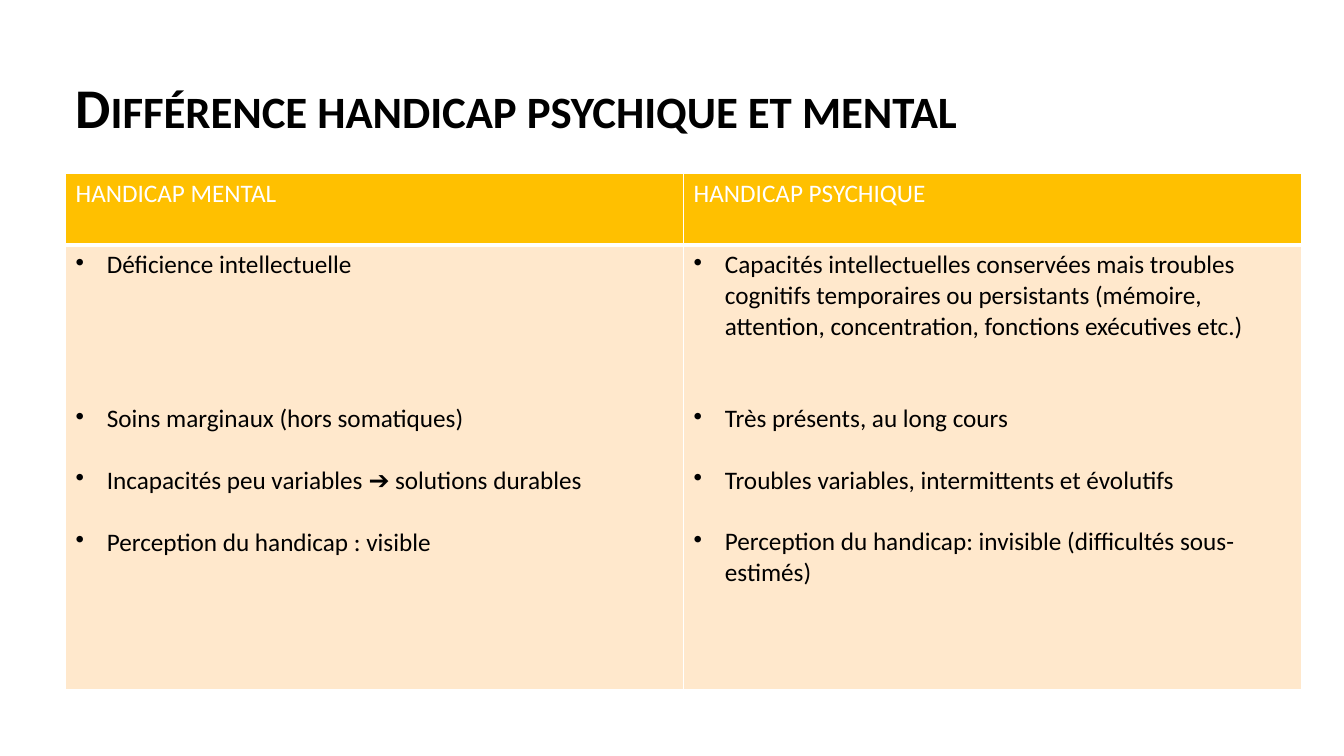
from lxml import etree
from pptx import Presentation
from pptx.dml.color import RGBColor
from pptx.enum import text
from pptx.oxml import ns
from pptx.util import Inches, Pt

BLACK = RGBColor(0, 0, 0)
WHITE = RGBColor(255, 255, 255)
GOLD = RGBColor(0xFF, 0xC0, 0)
CREAM = RGBColor(0xFF, 0xE8, 0xCC)

TITLE = {"name": "Calibri", "size": Pt(40), "bold": True}
CELL = {"name": "Calibri", "size": Pt(18), "bold": False}
LINE = 22

HEADS = ["HANDICAP MENTAL", "HANDICAP PSYCHIQUE"]
MENTAL = [
    ("Déficience intellectuelle", 0),
    ("Soins marginaux (hors somatiques)", 4),
    ("Incapacités peu variables ➔ solutions durables", 1),
    ("Perception du handicap : visible", 1),
]
PSYCHIC = [
    ("Capacités intellectuelles conservées mais troubles cognitifs temporaires "
     "ou persistants (mémoire, attention, concentration, fonctions exécutives etc.)", 0),
    ("Très présents, au long cours", 2),
    ("Troubles variables, intermittents et évolutifs", 1),
    ("Perception du handicap: invisible (difficultés sous-estimés)", 1),
]


def style(font, look, color):
    for key, value in look.items():
        setattr(font, key, value)
    font.color.rgb = color


def add_title(slide, words):
    box = slide.shapes.add_textbox(Inches(0.65), Inches(0.48), Inches(9.87), Inches(1.23))
    frame = box.text_frame
    frame.word_wrap = True
    frame.vertical_anchor = text.MSO_ANCHOR.MIDDLE
    para = frame.paragraphs[0]
    para.line_spacing = 0.9
    run = para.add_run()
    run.text = words
    style(run.font, TITLE, BLACK)
    run.font._element.set("cap", "small")


def add_edge(cell, side, width):
    props = cell._tc.get_or_add_tcPr()
    line = etree.SubElement(props, ns.qn(f"a:ln{side}"), w=str(Pt(width)))
    fill = etree.SubElement(line, ns.qn("a:solidFill"))
    etree.SubElement(fill, ns.qn("a:srgbClr"), val=str(WHITE))


def fill_cell(cell, items, back, color, base, dots):
    for side in "LRT":
        add_edge(cell, side, 1)
    add_edge(cell, "B", base)
    cell.fill.solid()
    cell.fill.fore_color.rgb = back
    frame = cell.text_frame
    for spot, (words, gap) in enumerate(items):
        para = frame.add_paragraph() if spot else frame.paragraphs[0]
        if dots:
            props = para._p.get_or_add_pPr()
            props.set("marL", str(Inches(0.31)))
            props.set("indent", str(Inches(-0.31)))
            etree.SubElement(props, ns.qn("a:buChar"), char="•")
        if gap:
            para.space_before = Pt(gap * LINE)
        run = para.add_run()
        run.text = words
        style(run.font, CELL, color)


def add_grid(slide):
    grid = slide.shapes.add_table(
        2, 2, Inches(0.65), Inches(1.72), Inches(12.26), Inches(5.12)).table
    grid.first_row = False
    grid.horz_banding = False
    for row, high in zip(grid.rows, (0.71, 4.41)):
        row.height = Inches(high)
    for col, (head, items) in enumerate(zip(HEADS, (MENTAL, PSYCHIC))):
        grid.columns[col].width = Inches(6.13)
        fill_cell(grid.cell(0, col), [(head, 0)], GOLD, WHITE, 3, False)
        fill_cell(grid.cell(1, col), items, CREAM, BLACK, 1, True)


def main():
    deck = Presentation()
    deck.slide_width = Inches(13.33)
    deck.slide_height = Inches(7.5)
    slide = deck.slides.add_slide(deck.slide_layouts[6])
    add_title(slide, "Différence handicap psychique et mental")
    add_grid(slide)
    deck.save("out.pptx")


if __name__ == "__main__":
    main()
